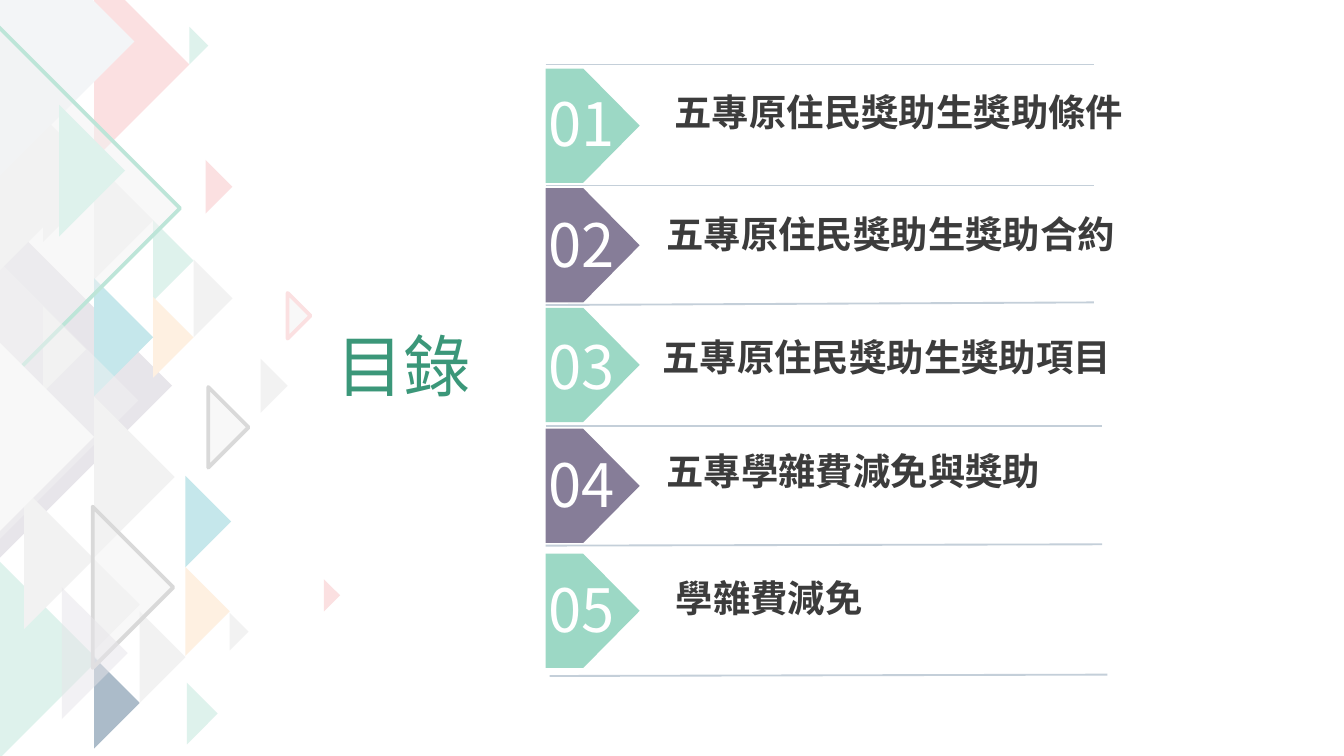
from lxml import etree
from pptx import Presentation
from pptx.dml.color import RGBColor
from pptx.enum.shapes import MSO_CONNECTOR
from pptx.enum.text import MSO_ANCHOR, MSO_AUTO_SIZE, PP_ALIGN
from pptx.oxml.ns import qn
from pptx.util import Inches, Pt

STRAIGHT = MSO_CONNECTOR.STRAIGHT
MIDDLE = MSO_ANCHOR.MIDDLE
NO_AUTOFIT = MSO_AUTO_SIZE.NONE
LEFT, RIGHT = PP_ALIGN.LEFT, PP_ALIGN.RIGHT

FONT = "Noto Sans CJK SC"
WHITE = RGBColor(0xFF, 0xFF, 0xFF)
GREY = RGBColor(0xF2, 0xF2, 0xF2)
MID_GREY = RGBColor(0xD9, 0xD9, 0xD9)
FROST = RGBColor(0xF3, 0xF5, 0xF7)
LILAC = RGBColor(0xE7, 0xE5, 0xEA)
PINK = RGBColor(0xFB, 0xE0, 0xE1)
MINT = RGBColor(0xDE, 0xF2, 0xEC)
MINT_LINE = RGBColor(0xBD, 0xE5, 0xD8)
PEACH = RGBColor(0xFE, 0xF0, 0xE1)
AQUA = RGBColor(0xC5, 0xE7, 0xEB)
SLATE = RGBColor(0xAB, 0xBB, 0xC9)
RULE = RGBColor(0xC4, 0xCF, 0xD9)
GREEN = RGBColor(0x9C, 0xD8, 0xC5)
PURPLE = RGBColor(0x86, 0x7D, 0x98)
DARK_GREEN = RGBColor(0x3B, 0x97, 0x79)
INK = RGBColor(0x3C, 0x3C, 0x3C)


def add_polygon(shapes, points, color):
    pts = [(Inches(x), Inches(y)) for x, y in points]
    fb = shapes.build_freeform(*pts[0], scale=1.0)
    fb.add_line_segments(pts[1:], close=True)
    sp = fb.convert_to_shape()
    sp.shadow.inherit = False
    sp.fill.solid()
    sp.fill.fore_color.rgb = color
    sp.line.fill.background()
    return sp


def write_text(sp, box, text, size, color, bold=False, align=LEFT):
    """Place a text shape and give it one line in the slide's font."""
    sp.left, sp.top, sp.width, sp.height = [Inches(v) for v in box]
    tf = sp.text_frame
    tf.text = text
    tf.word_wrap = True
    tf.auto_size = NO_AUTOFIT
    tf.vertical_anchor = MIDDLE
    p = tf.paragraphs[0]
    p.alignment = align
    font = p.runs[0].font
    font.name, font.size, font.bold = FONT, Pt(size), bold
    font.color.rgb = color
    ea = etree.SubElement(p.runs[0]._r.get_or_add_rPr(), qn("a:ea"))
    ea.set("typeface", FONT)


prs = Presentation()
prs.slide_width = Inches(10)
prs.slide_height = Inches(10) * 9 // 16
s = prs.slides.add_slide(prs.slide_layouts[5])
write_text(s.shapes.title, (1.74, 2.36, 1.86, 0.71), "目錄", 36, DARK_GREEN, align=RIGHT)

# Right-pointing triangles: left edge, tip height, half height, fill, opacity %, outline
triangles = [
    (0, 2.87, 1.28, LILAC, 100, None),
    (0, 1.28, 0.73, GREY, 100, None),
    (0.7, 1.64, 0.44, GREY, 100, None),
    (0.7, 0.48, 0.71, PINK, 100, None),
    (1.14, 1.94, 0.3, MINT, 100, None),
    (1.14, 2.51, 0.3, PEACH, 100, None),
    (0.7, 2.51, 0.44, AQUA, 100, None),
    (0.7, 3.55, 0.6, GREY, 100, None),
    (0.7, 4.5, 0.34, GREY, 100, None),
    (0, 4.91, 0.73, MINT, 100, None),
    (0.7, 5.23, 0.34, SLATE, 100, None),
    (1.04, 4.89, 0.34, GREY, 100, None),
    (1.38, 4.55, 0.33, PEACH, 100, None),
    (1.38, 3.88, 0.34, AQUA, 100, None),
    (0, 3.36, 0.51, GREY, 100, None),
    (0, 0.31, 1, FROST, 100, None),
    (0.32, 1.48, 0.32, GREY, 100, None),
    (0.32, 2.6, 0.32, GREY, 100, None),
    (0.18, 4.16, 0.52, GREY, 100, None),
    (1.53, 1.39, 0.2, PINK, 100, None),
    (-0.06, 1.55, 1.4, GREY, 50, MINT_LINE),
    (-0.06, 3.25, 0.76, WHITE, 100, None),
    (0.69, 4.37, 0.6, GREY, 50, MID_GREY),
    (1.55, 3.18, 0.3, GREY, 50, MID_GREY),
    (2.14, 2.35, 0.17, GREY, 50, PINK),
    (1.94, 2.87, 0.2, GREY, 100, None),
    (1.71, 4.7, 0.14, GREY, 100, None),
    (1.39, 5.31, 0.23, MINT, 100, None),
    (0, 2.98, 1.03, GREY, 50, None),
    (0.46, 4.86, 0.49, LILAC, 50, None),
    (0.44, 1.27, 0.49, MINT, 100, None),
    (1.44, 2.22, 0.29, GREY, 100, None),
    (1.41, 0.34, 0.14, MINT, 100, None),
    (2.41, 4.43, 0.12, PINK, 100, None),
]
decoration = s.shapes.add_group_shape()
for x, y, half, color, opacity, outline in triangles:
    points = [(x + half, y), (x, y + half), (x, y - half)]
    sp = add_polygon(decoration.shapes, points, color)
    if opacity < 100:
        clr = sp.fill._xPr.find(qn("a:solidFill"))[0]
        etree.SubElement(clr, qn("a:alpha")).set("val", str(opacity * 1000))
    if outline is not None:
        sp.line.color.rgb = outline
        sp.line.width = Pt(2)

# Divider lines: start x, start y, end x, end y
dividers = [
    (4.06, 0.48, 8.14, 0.48),
    (4.06, 1.38, 8.14, 1.38),
    (4.06, 2.27, 8.14, 2.25),
    (4.06, 3.17, 8.2, 3.17),
    (4.06, 4.06, 8.2, 4.05),
    (4.09, 5.03, 8.24, 5.02),
]
for ends in dividers:
    line = s.shapes.add_connector(STRAIGHT, *[Inches(v) for v in ends])
    line.line.color.rgb = RULE
    line.line.width = Pt(1)
    etree.SubElement(line._element.spPr, qn("a:effectLst"))

# Contents: marker top, number top, text left, text top, text width, text
entries = [
    (0.51, 0.59, 4.92, 0.61, 4.02, "五專原住民獎助生獎助條件"),
    (1.4, 1.49, 4.86, 1.52, 3.81, "五專原住民獎助生獎助合約"),
    (2.29, 2.4, 4.83, 2.43, 4.08, "五專原住民獎助生獎助項目"),
    (3.19, 3.28, 4.86, 3.28, 4.08, "五專學雜費減免與獎助"),
    (4.12, 4.21, 4.93, 4.23, 4.02, "學雜費減免"),
]
MARKER_X, MARKER_W, MARKER_H, SHOULDER = 4.06, 0.7, 0.85, 0.28
for i, (top, number_top, left, text_top, width, text) in enumerate(entries):
    bottom, shoulder_x = top + MARKER_H, MARKER_X + SHOULDER
    points = [(MARKER_X, top), (shoulder_x, top),
              (MARKER_X + MARKER_W, top + MARKER_H / 2),
              (shoulder_x, bottom), (MARKER_X, bottom)]
    add_polygon(s.shapes, points, PURPLE if i % 2 else GREEN)
    number = s.shapes.add_textbox(0, 0, 0, 0)
    write_text(number, (3.98, number_top, 0.73, 0.64), f"{i + 1:02d}", 32, WHITE)
    label = s.shapes.add_textbox(0, 0, 0, 0)
    write_text(label, (left, text_top, width, 0.44), text, 20, INK, bold=True)

prs.save("out.pptx")
